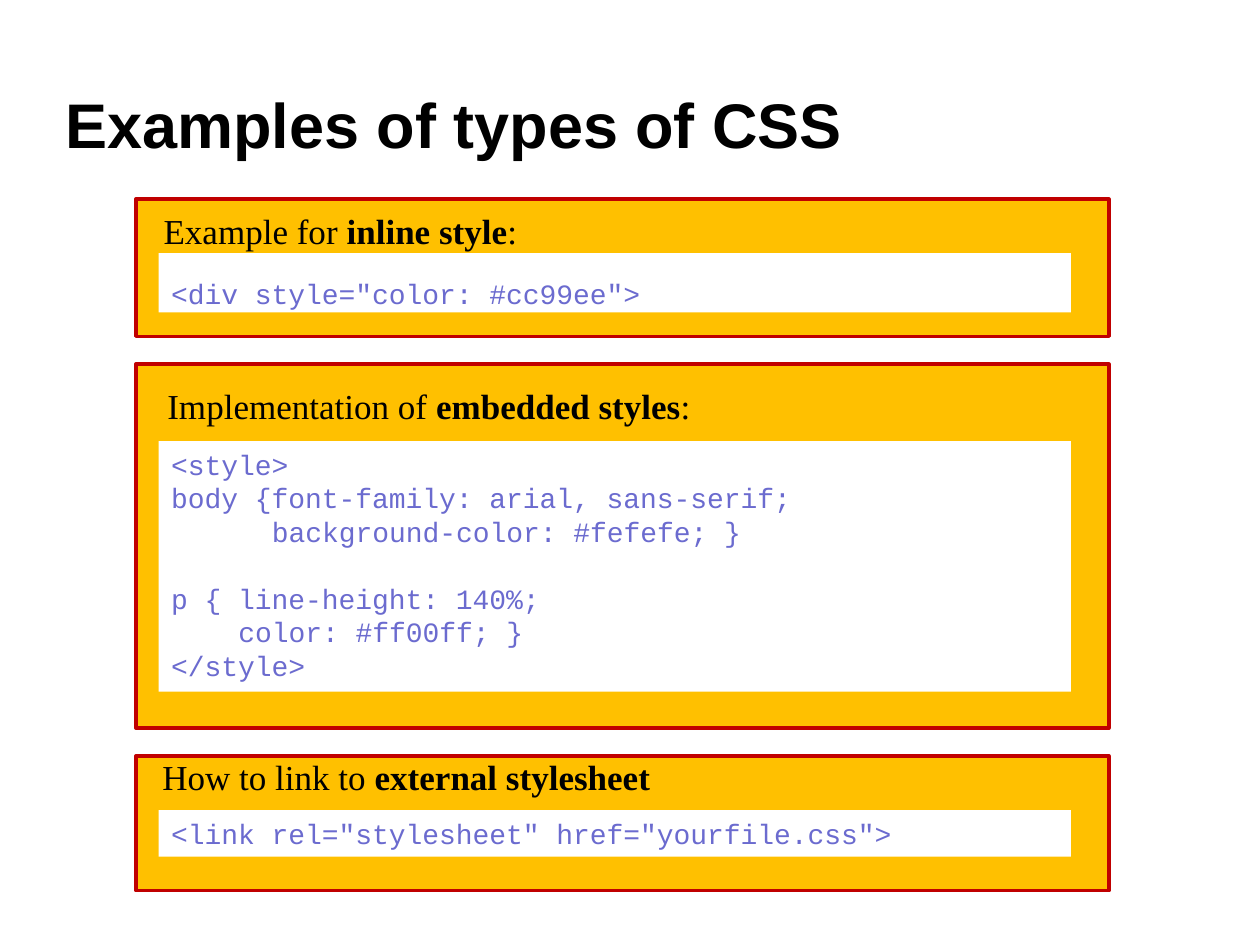
import dataclasses
import typing

import pptx
import pptx.dml.color
import pptx.enum.shapes
import pptx.enum.text
import pptx.util

WIDTH, HEIGHT = pptx.util.Inches(10), pptx.util.Inches(7.5)
COL, ROW = WIDTH / 100, HEIGHT / 100
CODE_SIZE = 16
CHAR_WIDTH = 0.6 * CODE_SIZE
CODE_LINE = 19
LABEL_WIDTH, LABEL_HEIGHT = 53, 5.87
BLACK, WHITE, AMBER, RED, VIOLET = "000000", "FFFFFF", "FFC000", "C00000", "6B6BCF"


class Box(typing.NamedTuple):
    left: float
    top: float
    width: float
    height: float


class Line(typing.NamedTuple):
    text: str
    indent: int = 0
    gap: int = 0
    spacing: float = 1.0


@dataclasses.dataclass
class Example:
    top: float
    height: float
    label_left: float
    label_top: float
    label: list[tuple[str, bool]]
    code_top: float
    code_height: float
    code: list[Line]


EXAMPLES = [
    Example(21.07, 14.53, 12, 21.47,
            [("Example for ", False), ("inline style", True), (":", False)],
            26.8, 6.27,
            [Line('<div style="color: #cc99ee">', spacing=1.5)]),
    Example(38.53, 38.53, 12.3, 40,
            [("Implementation of ", False), ("embedded styles", True), (":", False)],
            46.67, 26.53,
            [Line("<style>"),
             Line("body {font-family: arial, sans-serif;"),
             Line("background-color: #fefefe; }", indent=6),
             Line("p { line-height: 140%;", gap=1),
             Line("color: #ff00ff; }", indent=4),
             Line("</style>")]),
    Example(80, 14.27, 11.9, 79.33,
            [("How to link to ", False), ("external stylesheet", True)],
            85.73, 4.93,
            [Line('<link rel="stylesheet" href="yourfile.css">')]),
]


def rgb(value: str) -> pptx.dml.color.RGBColor:
    """Turn a hex string into a colour."""
    return pptx.dml.color.RGBColor.from_string(value)


def place(box: Box) -> list[int]:
    """Convert grid columns and rows to slide lengths."""
    return [round(n * unit) for n, unit in zip(box, (COL, ROW, COL, ROW))]


def add_run(p, text: str, font: str, size: float, color: str, bold: bool = False) -> None:
    """Append a formatted run to a paragraph."""
    r = p.add_run()
    r.text = text
    r.font.name, r.font.size, r.font.bold = font, pptx.util.Pt(size), bold
    r.font.color.rgb = rgb(color)


def add_rect(s, box: Box, fill: str, line: str | None = None):
    """Draw a flat rectangle with an optional outline."""
    sp = s.shapes.add_shape(pptx.enum.shapes.MSO_SHAPE.RECTANGLE, *place(box))
    sp.shadow.inherit = False
    sp.fill.solid()
    sp.fill.fore_color.rgb = rgb(fill)
    if line:
        sp.line.color.rgb = rgb(line)
        sp.line.width = pptx.util.Pt(2)
    else:
        sp.line.fill.background()
    return sp


def add_text(s, box: Box, runs: list[tuple[str, bool]], font: str, size: float) -> None:
    """Add a one-paragraph text box."""
    tf = s.shapes.add_textbox(*place(box)).text_frame
    tf.word_wrap = True
    for text, bold in runs:
        add_run(tf.paragraphs[0], text, font, size, BLACK, bold)


def add_code(s, box: Box, lines: list[Line]) -> None:
    """Draw a white panel holding lines of code."""
    tf = add_rect(s, box, WHITE).text_frame
    tf.word_wrap = True
    tf.vertical_anchor = pptx.enum.text.MSO_ANCHOR.TOP
    for i, line in enumerate(lines):
        p = tf.add_paragraph() if i else tf.paragraphs[0]
        p.alignment = pptx.enum.text.PP_ALIGN.LEFT
        p.line_spacing = line.spacing
        p.space_before = pptx.util.Pt(line.gap * CODE_LINE)
        indent = pptx.util.Pt(line.indent * CHAR_WIDTH)
        p._p.get_or_add_pPr().set("marL", str(indent))
        add_run(p, line.text, "Courier New", CODE_SIZE, VIOLET)


def add_example(s, ex: Example) -> None:
    """Draw a framed example with its label and code."""
    add_rect(s, Box(10.8, ex.top, 77.2, ex.height), AMBER, RED)
    add_code(s, Box(12.6, ex.code_top, 72.4, ex.code_height), ex.code)
    add_text(s, Box(ex.label_left, ex.label_top, LABEL_WIDTH, LABEL_HEIGHT),
             ex.label, "Times New Roman", 20)


def main() -> None:
    """Build and save the slide."""
    prs = pptx.Presentation()
    prs.slide_width, prs.slide_height = WIDTH, HEIGHT
    s = prs.slides.add_slide(prs.slide_layouts[6])
    add_text(s, Box(4.2, 8.4, 88.5, 9.47), [("Examples of types of CSS", True)], "Arial", 36)
    for ex in EXAMPLES:
        add_example(s, ex)
    prs.save("out.pptx")


if __name__ == "__main__":
    main()
